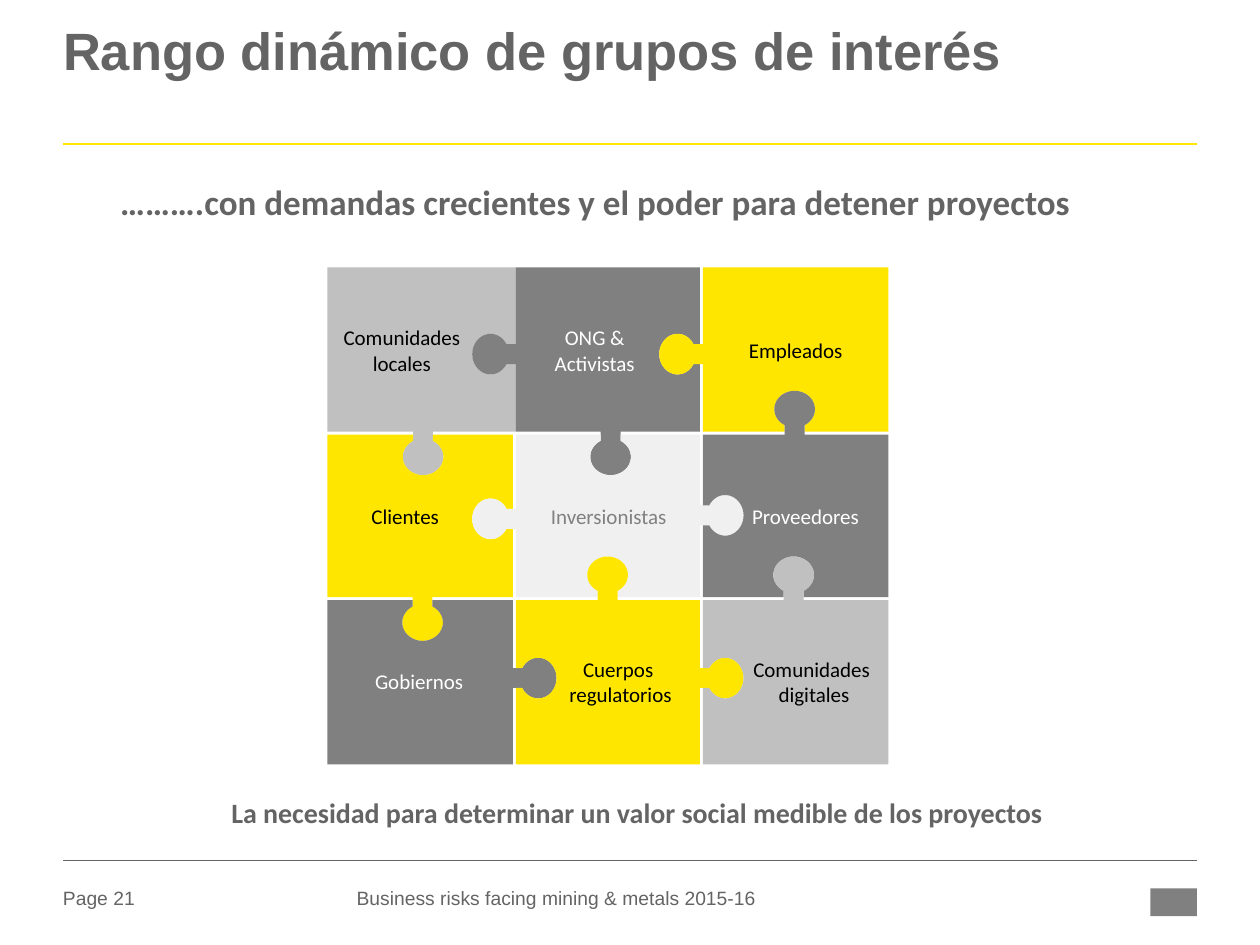
from math import asin, cos, pi, sin

from lxml.etree import SubElement
from pptx import Presentation
from pptx.dml.color import RGBColor
from pptx.enum.shapes import MSO_CONNECTOR, MSO_SHAPE
from pptx.enum.text import MSO_ANCHOR, MSO_AUTO_SIZE, PP_ALIGN
from pptx.oxml.ns import qn
from pptx.util import Cm, Pt

YELLOW = RGBColor(0xFF, 0xE6, 0x00)
DARK = RGBColor(0x64, 0x64, 0x64)
GRAY = RGBColor(0x80, 0x80, 0x80)
SILVER = RGBColor(0xC0, 0xC0, 0xC0)
PALE = RGBColor(0xF0, 0xF0, 0xF0)
WHITE = RGBColor(0xFF, 0xFF, 0xFF)
BLACK = RGBColor(0x00, 0x00, 0x00)

GRID_LEFT, GRID_TOP = 6.6, 5.39
PIECE_WIDTH, PIECE_HEIGHT = 3.77, 3.34
HALF_GAP = 0.03
HALF_NECK, KNOB_CENTRE, KNOB_ALONG, KNOB_DEPTH = 0.2, 0.48, 0.41, 0.37
ARC_STEPS = 32
LINE_HEIGHT = 0.51

# Knobs are (position along the seam, direction): 1 is right or down, -1 is left or up.
SIDE_KNOBS = [
    [(7.14, -1), (7.14, -1)],
    [(10.46, -1), (10.39, 1)],
    [(13.67, 1), (13.67, 1)],
]
FLOOR_KNOBS = [
    [(8.53, 1), (12.31, 1), (16.02, -1)],
    [(8.52, 1), (12.25, -1), (16, -1)],
]
# Pieces are (label, fill, text colour, label centre, label width).
PIECES = [
    [("Comunidades \nlocales ", SILVER, BLACK, 8.15, 2.79),
     ("ONG &\vActivistas", GRAY, WHITE, 11.99, 1.98),
     ("Empleados", YELLOW, BLACK, 16.04, 2.16)],
    [("Clientes", YELLOW, BLACK, 8.17, 1.6),
     ("Inversionistas", PALE, GRAY, 12.27, 2.79),
     ("Proveedores", GRAY, WHITE, 16.24, 2.51)],
    [("Gobiernos", GRAY, WHITE, 8.45, 2.01),
     ("Cuerpos \nregulatorios", YELLOW, BLACK, 12.51, 2.41),
     ("Comunidades \ndigitales", SILVER, BLACK, 16.41, 2.79)],
]


def apply(target, values):
    """Set each named attribute of the target."""
    for name, value in values.items():
        setattr(target, name, value)


def place(shape, left, top, width, height):
    """Move and size a shape, in centimetres."""
    apply(shape, {"left": Cm(left), "top": Cm(top),
                  "width": Cm(width), "height": Cm(height)})


def write(box, text, color, font, frame=None, para=None):
    """Fill a box with text in one format."""
    margins = dict.fromkeys(
        ("margin_left", "margin_top", "margin_right", "margin_bottom"), 0)
    box.text_frame.text = text
    apply(box.text_frame, {"word_wrap": True, "auto_size": MSO_AUTO_SIZE.NONE,
                           "vertical_anchor": MSO_ANCHOR.TOP,
                           **margins, **(frame or {})})
    for paragraph in box.text_frame.paragraphs:
        apply(paragraph, para or {})
        for span in paragraph.runs:
            apply(span.font, font)
            span.font.color.rgb = color


def add_text(page, text, area, color, font, frame=None, para=None):
    """Add a text box."""
    box = page.shapes.add_textbox(*map(Cm, area))
    write(box, text, color, font, frame, para)


def add_rule(page, top, color, width):
    """Add a horizontal line across the page."""
    line = page.shapes.add_connector(
        MSO_CONNECTOR.STRAIGHT, Cm(1.27), Cm(top), Cm(24.13), Cm(top))
    line.line.color.rgb = color
    line.line.width = Pt(width)
    SubElement(line._element.spPr, qn("a:effectLst"))


def paint(shape, color):
    """Give a shape a plain fill without line or shadow."""
    shape.shadow.inherit = False
    shape.fill.solid()
    shape.fill.fore_color.rgb = color
    shape.line.fill.background()


def knob_points(knob, seam, edge):
    """Return (along, across) points of a knob, in rising order along the seam."""
    if knob is None:
        return []
    position, direction = knob
    reach = pi - asin(HALF_NECK / KNOB_ALONG)
    angles = [reach * (2 * step / ARC_STEPS - 1) for step in range(ARC_STEPS + 1)]
    arc = [(position + KNOB_ALONG * sin(angle),
            seam + direction * (KNOB_CENTRE + KNOB_DEPTH * cos(angle)))
           for angle in angles]
    return [(position - HALF_NECK, edge), *arc, (position + HALF_NECK, edge)]


def piece_outline(row, column):
    """Return the clockwise outline of a puzzle piece."""
    west = GRID_LEFT + column * PIECE_WIDTH
    north = GRID_TOP + row * PIECE_HEIGHT
    east, south = west + PIECE_WIDTH, north + PIECE_HEIGHT
    east_gap = -HALF_GAP if (row, column) == (0, 0) else HALF_GAP
    left = west + HALF_GAP * (column > 0)
    right = east - east_gap * (column < 2)
    top = north + HALF_GAP * (row > 0)
    bottom = south - HALF_GAP * (row < 2)
    above = knob_points(FLOOR_KNOBS[row - 1][column] if row else None, north, top)
    below = knob_points(FLOOR_KNOBS[row][column] if row < 2 else None, south, bottom)
    before = knob_points(SIDE_KNOBS[row][column - 1] if column else None, west, left)
    after = knob_points(SIDE_KNOBS[row][column] if column < 2 else None, east, right)
    return [(left, top), *above, (right, top), *((x, y) for y, x in after),
            (right, bottom), *reversed(below), (left, bottom),
            *((x, y) for y, x in reversed(before))]


def add_piece(page, row, column, color):
    """Add one puzzle piece."""
    start, *rest = [(Cm(x), Cm(y)) for x, y in piece_outline(row, column)]
    builder = page.shapes.build_freeform(*start)
    builder.add_line_segments(rest, close=True)
    paint(builder.convert_to_shape(), color)


def add_label(page, row, text, color, centre, width):
    """Add a piece label centred in its row."""
    height = LINE_HEIGHT * len(text.splitlines())
    top = GRID_TOP + (row + 0.5) * PIECE_HEIGHT - height / 2
    add_text(page, text, (centre - width / 2, top, width, height), color,
             {"name": "Calibri", "size": Pt(12)}, {"word_wrap": False},
             {"alignment": PP_ALIGN.CENTER})


def add_puzzle(page):
    """Add all pieces, then their labels."""
    for row, pieces in enumerate(PIECES):
        for column, piece in enumerate(pieces):
            add_piece(page, row, column, piece[1])
    for row, pieces in enumerate(PIECES):
        for text, _, color, centre, width in pieces:
            add_label(page, row, text, color, centre, width)


def add_headings(page):
    """Fill the title and body placeholders and add the closing message."""
    title, body = page.shapes.title, page.placeholders[1]
    place(title, 1.27, 0.56, 22.81, 2.39)
    write(title, "Rango dinámico de grupos de interés", DARK,
          {"name": "Arial", "size": Pt(30), "bold": True},
          para={"alignment": PP_ALIGN.LEFT, "line_spacing": 0.85})
    message = {"alignment": PP_ALIGN.CENTER, "space_before": 0, "space_after": Pt(6)}
    font = {"name": "Calibri", "bold": True}
    place(body, 1.27, 3.63, 21.46, 0.86)
    write(body, "……….con demandas crecientes y el poder para detener proyectos",
          DARK, {**font, "size": Pt(20)}, para=message)
    properties = body.text_frame.paragraphs[0]._p.get_or_add_pPr()
    properties.set("marL", "0")
    properties.set("indent", "0")
    SubElement(properties, qn("a:buNone"))
    add_text(page, "La necesidad para determinar un valor social medible de los proyectos",
             (2.67, 16.03, 20.35, 0.69), DARK, {**font, "size": Pt(16)}, para=message)


def add_footer(page):
    """Add the footer texts and a plain mark."""
    for text, left, width in (
            ("Page 21", 1.27, 2.01),
            ("Business risks facing mining & metals 2015-16", 7.19, 9.55)):
        add_text(page, text, (left, 17.81, width, 0.56), DARK,
                 {"name": "Arial", "size": Pt(11)},
                 {"vertical_anchor": MSO_ANCHOR.MIDDLE})
    mark = page.shapes.add_shape(
        MSO_SHAPE.RECTANGLE, *map(Cm, (23.19, 17.91, 0.94, 0.56)))
    paint(mark, GRAY)


def main():
    """Build the deck and save it."""
    deck = Presentation()
    apply(deck, {"slide_width": Cm(25.4), "slide_height": Cm(19.05)})
    page = deck.slides.add_slide(deck.slide_layouts[1])
    add_rule(page, 2.9, YELLOW, 1.5)
    add_rule(page, 17.35, DARK, 0.25)
    add_puzzle(page)
    add_headings(page)
    add_footer(page)
    deck.save("out.pptx")


if __name__ == "__main__":
    main()
